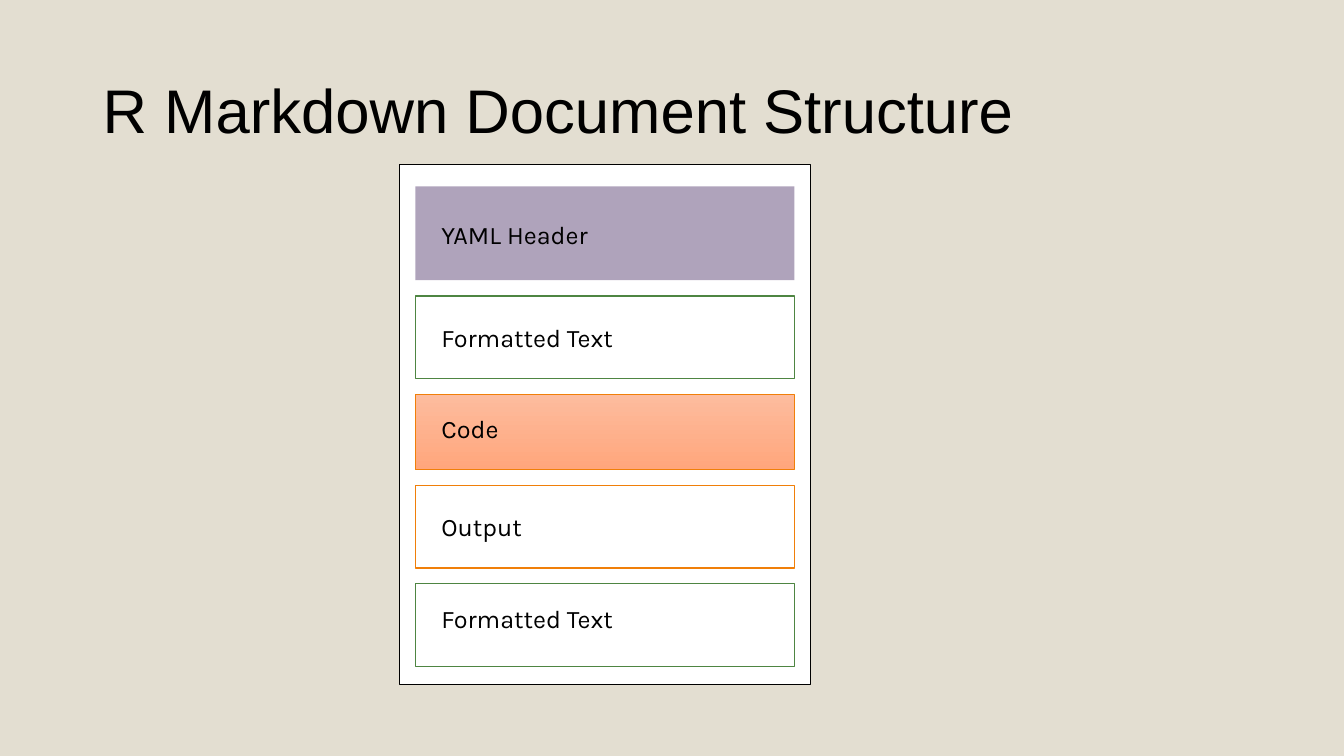
from pptx import Presentation
from pptx.dml.color import RGBColor
from pptx.enum.shapes import MSO_SHAPE
from pptx.enum.text import MSO_ANCHOR, MSO_AUTO_SIZE
from pptx.oxml.ns import qn
from pptx.util import Inches, Pt
from lxml.etree import SubElement

CELL = Inches(0.1)
PAGE = (39.6, 16.3, 40.8, 51.6)
BLOCK_LEFT, BLOCK_WIDTH = 41.2, 37.6
STACK_TOP, STACK_BOTTOM = 18.5, 66.1
LABEL_INDENT, LABEL_WIDTH, LABEL_HEIGHT = 1.6, 29.3, 4

SECTIONS = [
    ("YAML Header", 9.3, 2.8, ["604878"], 50, None, 0),
    ("Formatted Text", 8.2, 2.1, ["FFFFFF"], 100, "4E8542", 1),
    ("Code", 7.5, 1.4, ["FDBC9E", "FFA67C"], 100, "F07F09", 0.5),
    ("Output", 8.2, 2.1, ["FFFFFF"], 100, "F07F09", 1),
    ("Formatted Text", 8.2, 1.5, ["FFFFFF"], 100, "4E8542", 1),
]


def color(value):
    return RGBColor.from_string(value)


def cells(*counts):
    return [round(count * CELL) for count in counts]


def paint(fill, colors, opacity):
    if len(colors) > 1:
        fill.gradient()
        fill.gradient_angle = 270
        for stop, value in zip(fill.gradient_stops, colors):
            stop.color.rgb = color(value)
        return
    fill.solid()
    fill.fore_color.rgb = color(colors[0])


def set_opacity(shape, opacity):
    solid = shape.element.spPr.find(qn("a:solidFill"))
    SubElement(solid[0], qn("a:alpha")).set("val", str(opacity * 1000))


def add_box(shapes, area, colors, opacity, outline, weight):
    shape = shapes.add_shape(MSO_SHAPE.RECTANGLE, *cells(*area))
    shape.shadow.inherit = False
    paint(shape.fill, colors, opacity)
    if opacity < 100:
        set_opacity(shape, opacity)
    if outline:
        shape.line.color.rgb = color(outline)
        shape.line.width = Pt(weight)
    else:
        shape.line.fill.background()


def add_text(shapes, area, text, font, size):
    text_frame = shapes.add_textbox(*cells(*area)).text_frame
    text_frame.word_wrap = True
    text_frame.text = text
    run_font = text_frame.paragraphs[0].runs[0].font
    run_font.name = font
    run_font.size = Pt(size)
    run_font.color.rgb = color("000000")
    return text_frame


def add_title(slide, text):
    text_frame = add_text(slide.shapes, (9.2, 4, 115, 14.5), text, "Arial", 44)
    text_frame.vertical_anchor = MSO_ANCHOR.MIDDLE
    text_frame.paragraphs[0].line_spacing = 0.9


def add_document(slide):
    shapes = slide.shapes.add_group_shape().shapes
    add_box(shapes, PAGE, ["FFFFFF"], 100, "000000", 1)
    heights = [section[1] for section in SECTIONS]
    gap = (STACK_BOTTOM - STACK_TOP - sum(heights)) / (len(heights) - 1)
    top = STACK_TOP
    for label, height, label_drop, colors, opacity, outline, weight in SECTIONS:
        add_box(shapes, (BLOCK_LEFT, top, BLOCK_WIDTH, height),
                colors, opacity, outline, weight)
        label_area = (BLOCK_LEFT + LABEL_INDENT, top + label_drop,
                      LABEL_WIDTH, LABEL_HEIGHT)
        text_frame = add_text(shapes, label_area, label, "Karla", 18)
        text_frame.auto_size = MSO_AUTO_SIZE.SHAPE_TO_FIT_TEXT
        top += height + gap


def main():
    presentation = Presentation()
    presentation.slide_width = Inches(13.33)
    presentation.slide_height = Inches(7.5)
    slide = presentation.slides.add_slide(presentation.slide_layouts[6])
    slide.background.fill.solid()
    slide.background.fill.fore_color.rgb = color("E3DED1")
    add_title(slide, "R Markdown Document Structure")
    add_document(slide)
    presentation.save("out.pptx")


if __name__ == "__main__":
    main()
